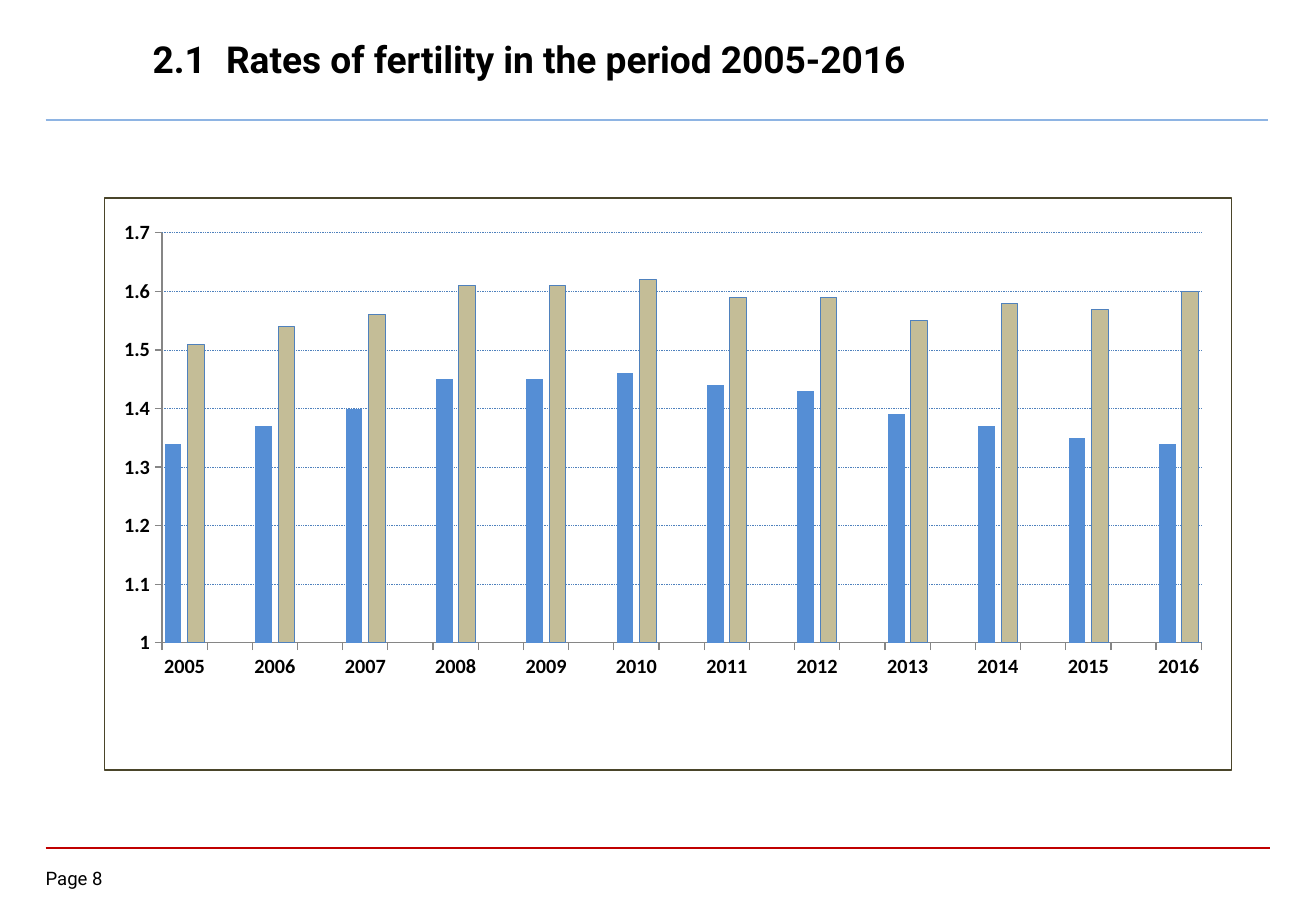
from lxml import etree
from pptx import Presentation
from pptx import util as u
from pptx.chart import data
from pptx.dml.color import RGBColor
from pptx.enum import chart as charts, dml, shapes, text
from pptx.oxml import parse_xml
from pptx.oxml.ns import nsdecls, qn

PX = 9525  # EMU per px, 96 px to the inch


def px(*lengths):
    return [u.Emu(length * PX) for length in lengths]


def color(hex_value):
    return RGBColor.from_string(hex_value)


deck = Presentation()
deck.slide_width, deck.slide_height = px(1040, 720)
slide = deck.slides.add_slide(deck.slide_layouts[5])

# Rules under the heading and above the footer
for right, y, rule_color, weight in [(1002, 95, "8EB4E3", 1.5), (1004, 670, "C00000", 1)]:
    rule = slide.shapes.add_connector(shapes.MSO_CONNECTOR.STRAIGHT, *px(36, y, right, y))
    rule.line.color.rgb = color(rule_color)
    rule.line.width = u.Pt(weight)
    etree.SubElement(rule._element.spPr, qn("a:effectLst"))

# Heading and page number
heading = slide.shapes.title
heading.left, heading.top, heading.width, heading.height = px(111, 12, 688, 68)
page_number = slide.shapes.add_textbox(*px(36, 685, 70, 21))
page_frame = page_number.text_frame
page_frame.margin_left = page_frame.margin_right = 0
page_frame.margin_top = page_frame.margin_bottom = 0

for box, wording, size, bold in [
    (heading, "2.1\tRates of fertility in the period 2005-2016", 22, True),
    (page_number, "Page 8", 11, False),
]:
    frame = box.text_frame
    frame.word_wrap = True
    frame.auto_size = text.MSO_AUTO_SIZE.NONE
    paragraph = frame.paragraphs[0]
    paragraph.alignment = text.PP_ALIGN.LEFT
    if "\t" in wording:
        tabs = etree.SubElement(paragraph._p.get_or_add_pPr(), qn("a:tabLst"))
        etree.SubElement(tabs, qn("a:tab"), pos=str(58 * PX), algn="l")
    run = paragraph.add_run()
    run.text = wording
    run.font.name, run.font.size, run.font.bold = "Roboto", u.Pt(size), bold
    run.font.color.rgb = color("000000")
heading.text_frame.vertical_anchor = text.MSO_ANCHOR.MIDDLE

# Fertility rates, with an empty category between years
years = range(2005, 2017)
blue_rates = [1.34, 1.37, 1.4, 1.45, 1.45, 1.46, 1.44, 1.43, 1.39, 1.37, 1.35, 1.34]
tan_rates = [1.51, 1.54, 1.56, 1.61, 1.61, 1.62, 1.59, 1.59, 1.55, 1.58, 1.57, 1.6]
rate_data = data.CategoryChartData()
rate_data.categories = [label for year in years for label in (str(year), "")][:-1]
for rates in (blue_rates, tan_rates):
    rate_data.add_series("", [value for rate in rates for value in (rate, 0)][:-1])

fertility = slide.shapes.add_chart(
    charts.XL_CHART_TYPE.COLUMN_CLUSTERED, *px(82, 156, 892, 453), rate_data
).chart
fertility.has_title = False
fertility.has_legend = False
fertility.font.name, fertility.font.size = "Calibri", u.Pt(10)
fertility.font.color.rgb = color("000000")

# Columns
plot = fertility.plots[0]
plot.gap_width, plot.overlap = 35, -37
plot.vary_by_categories = False
for columns, fill in zip(plot.series, ["558ED5", "C4BD97"]):
    columns.invert_if_negative = False
    columns.format.fill.solid()
    columns.format.fill.fore_color.rgb = color(fill)
    columns.format.line.fill.background()
tan_outline = plot.series[1].format.line
tan_outline.color.rgb = color("4F81BD")
tan_outline.width = u.Pt(0.5)

# Axes and gridlines
for axis in (fertility.category_axis, fertility.value_axis):
    axis.major_tick_mark = charts.XL_TICK_MARK.OUTSIDE
    axis.minor_tick_mark = charts.XL_TICK_MARK.NONE
    axis.format.line.color.rgb = color("868686")
    axis.format.line.width = u.Pt(0.75)
    labels = axis.tick_labels.font
    labels.name, labels.size, labels.bold = "Calibri", u.Pt(12), True
    labels.color.rgb = color("000000")
rate_axis = fertility.value_axis
rate_axis.minimum_scale, rate_axis.maximum_scale, rate_axis.major_unit = 1, 1.7, 0.1
grid = rate_axis.major_gridlines.format.line
grid.color.rgb = color("4F81BD")
grid.width = u.Pt(0.5)
grid.dash_style = dml.MSO_LINE.ROUND_DOT

# Plot area position and chart border
plot_area = fertility._chartSpace.chart.plotArea
for old_layout in plot_area.findall(qn("c:layout")):
    plot_area.remove(old_layout)
plot_area.insert(0, parse_xml(
    f'<c:layout {nsdecls("c")}><c:manualLayout><c:layoutTarget val="inner"/>'
    '<c:xMode val="edge"/><c:yMode val="edge"/><c:x val="0.051"/><c:y val="0.061"/>'
    '<c:w val="0.922"/><c:h val="0.717"/></c:manualLayout></c:layout>'
))
fertility._chartSpace.chart.addnext(parse_xml(
    f'<c:spPr {nsdecls("c", "a")}><a:noFill/><a:ln w="9525"><a:solidFill>'
    '<a:srgbClr val="4A452A"/></a:solidFill></a:ln></c:spPr>'
))

deck.save("out.pptx")
